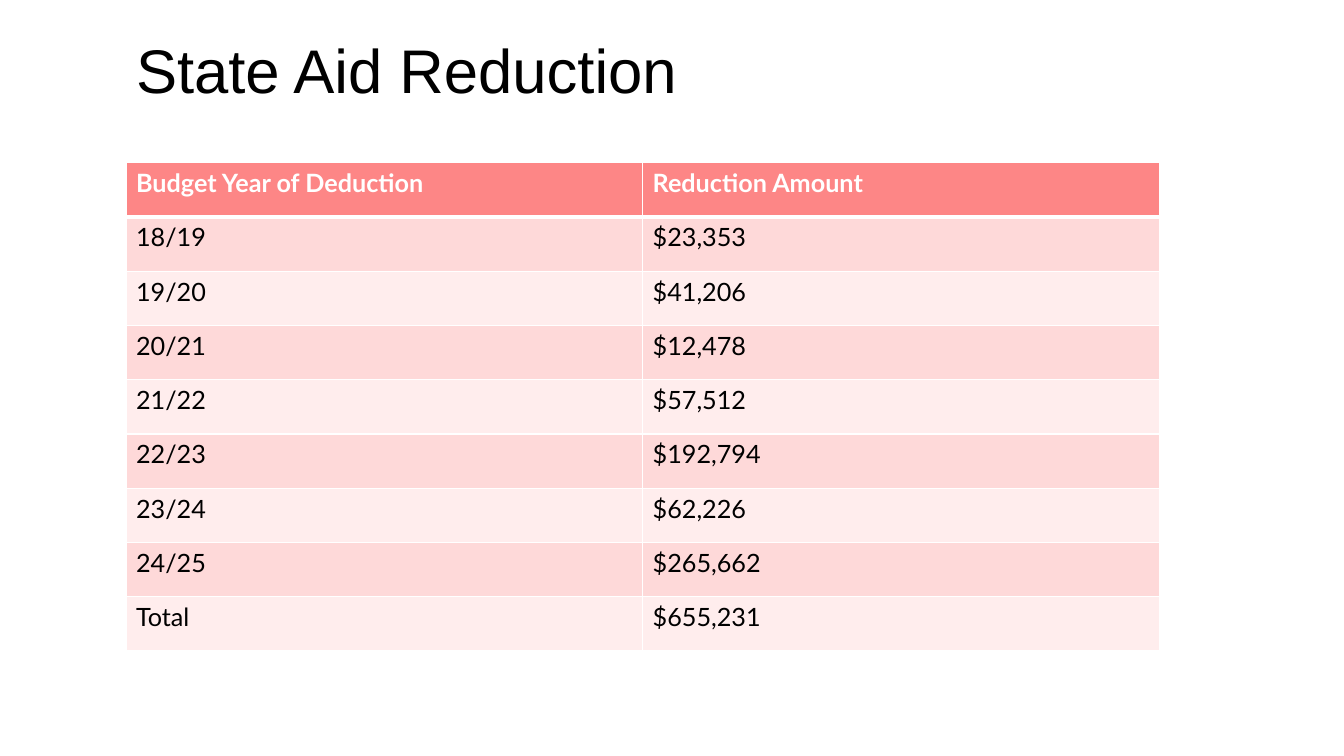
from dataclasses import dataclass

from lxml import etree
from pptx import Presentation
from pptx.dml.color import RGBColor
from pptx.enum.text import MSO_ANCHOR, PP_ALIGN
from pptx.oxml.ns import qn
from pptx.util import Pt

TITLE = "State Aid Reduction"
HEADER = ("Budget Year of Deduction", "Reduction Amount")
REDUCTIONS = [
    ("18/19", "$23,353"),
    ("19/20", "$41,206"),
    ("20/21", "$12,478"),
    ("21/22", "$57,512"),
    ("22/23", "$192,794"),
    ("23/24", "$62,226"),
    ("24/25", "$265,662"),
    ("Total", "$655,231"),
]

PX = 9525  # EMU per px, 96 px to the inch
SLIDE_SIZE = (1280, 720)
TITLE_BOX = (120, 27, 1040, 90)
TITLE_TOP_INSET = 11
TABLE_BOX = (120, 155, 984, 465)
TITLE_ONLY_LAYOUT = 5
TOP, LEFT = MSO_ANCHOR.TOP, PP_ALIGN.LEFT


@dataclass(frozen=True)
class Theme:
    title_font: str = "Arial"
    table_font: str = "Lato"
    title_size: int = 44
    table_size: int = 18
    text: str = "000000"
    header_text: str = "FFFFFF"
    header_fill: str = "FD8686"
    bands: tuple = ("FED9D9", "FFEDED")
    border: str = "FFFFFF"
    border_width: int = 1
    header_rule_width: int = 3


THEME = Theme()


def emu(lengths):
    return [length * PX for length in lengths]


def style_font(font, name, size, color, bold=False):
    font.name = name
    font.size = Pt(size)
    font.bold = bold
    font.color.rgb = RGBColor.from_string(color)


def set_borders(cell, widths):
    """Add solid borders; widths maps a:ln* side names to points, in schema order."""
    properties = cell._tc.get_or_add_tcPr()
    for position, (side, width) in enumerate(widths.items()):
        line = etree.Element(qn(f"a:{side}"), w=str(Pt(width)))
        fill = etree.SubElement(line, qn("a:solidFill"))
        etree.SubElement(fill, qn("a:srgbClr"), val=THEME.border)
        properties.insert(position, line)


def add_title(slide):
    title = slide.shapes.title
    title.left, title.top, title.width, title.height = emu(TITLE_BOX)
    frame = title.text_frame
    frame.text = TITLE
    frame.vertical_anchor = TOP
    frame.margin_top = TITLE_TOP_INSET * PX
    paragraph = frame.paragraphs[0]
    paragraph.alignment = LEFT
    paragraph.line_spacing = 0.9
    style_font(paragraph.font, THEME.title_font, THEME.title_size, THEME.text)


def add_reduction_table(slide):
    rows = [HEADER, *REDUCTIONS]
    table = slide.shapes.add_table(len(rows), len(HEADER), *emu(TABLE_BOX)).table
    for row_index, values in enumerate(rows):
        is_header = row_index == 0
        fill = THEME.header_fill if is_header else THEME.bands[(row_index - 1) % 2]
        color = THEME.header_text if is_header else THEME.text
        widths = dict.fromkeys(("lnL", "lnR", "lnT", "lnB"), THEME.border_width)
        if is_header:
            widths["lnB"] = THEME.header_rule_width
        elif row_index == 1:
            widths["lnT"] = THEME.header_rule_width
        for column_index, value in enumerate(values):
            cell = table.cell(row_index, column_index)
            cell.text = value
            cell.fill.solid()
            cell.fill.fore_color.rgb = RGBColor.from_string(fill)
            style_font(cell.text_frame.paragraphs[0].font, THEME.table_font,
                       THEME.table_size, color, is_header)
            set_borders(cell, widths)


def main():
    presentation = Presentation()
    presentation.slide_width, presentation.slide_height = emu(SLIDE_SIZE)
    slide = presentation.slides.add_slide(presentation.slide_layouts[TITLE_ONLY_LAYOUT])
    add_title(slide)
    add_reduction_table(slide)
    presentation.save("out.pptx")


if __name__ == "__main__":
    main()
